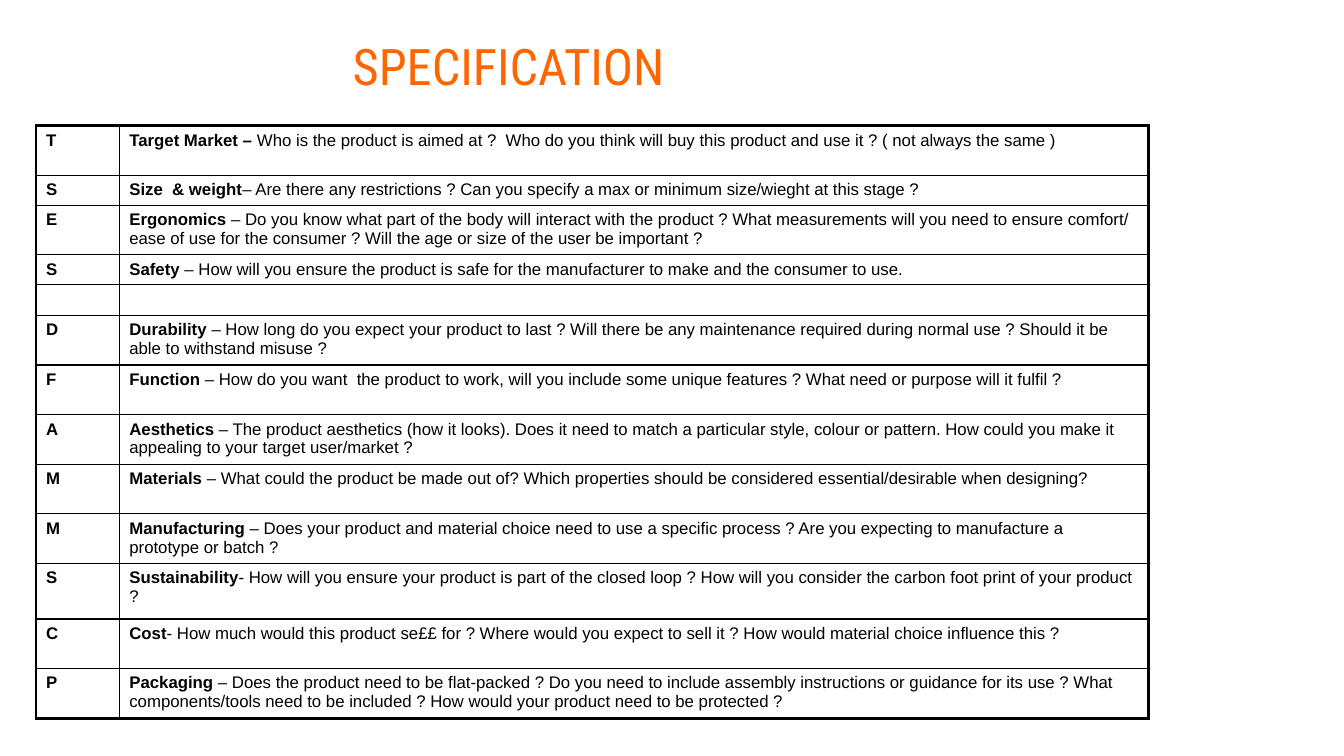
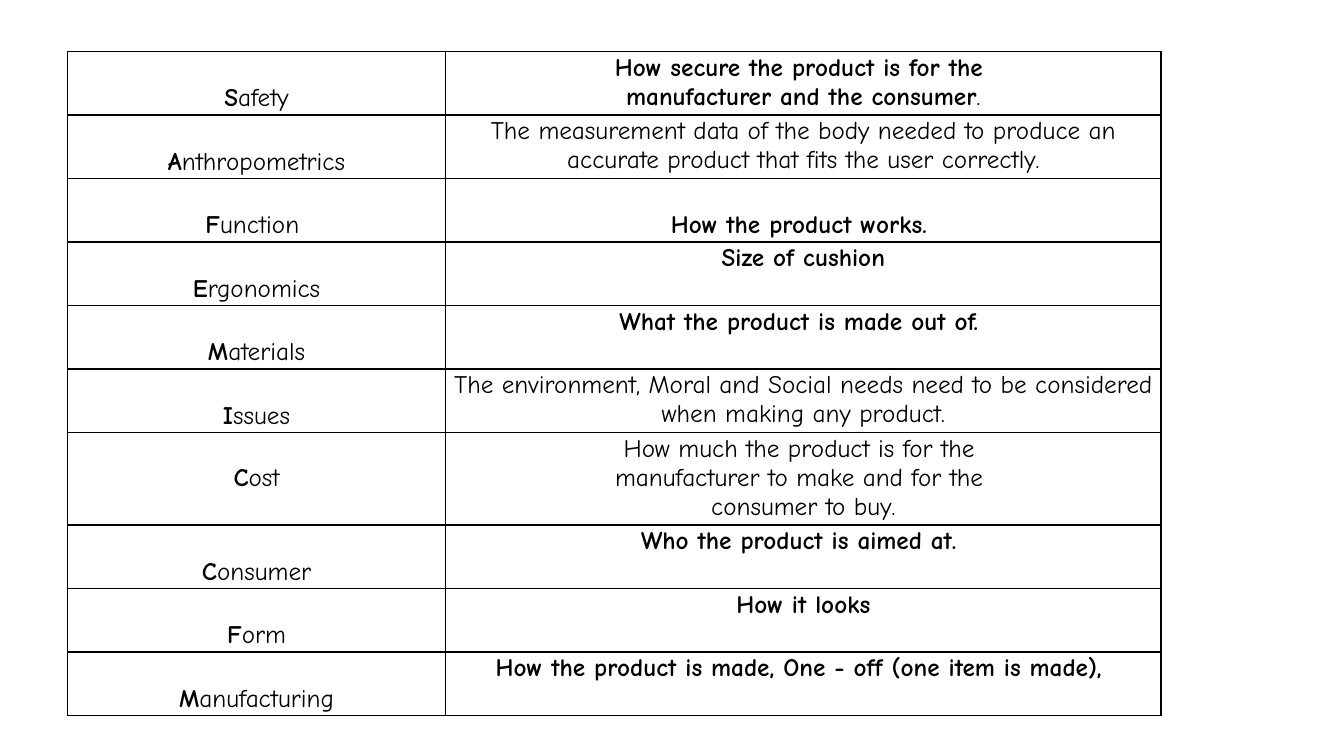
from typing import NamedTuple

from lxml import etree
from pptx import Presentation
from pptx.dml.color import RGBColor
from pptx.enum.text import MSO_ANCHOR, MSO_AUTO_SIZE, PP_ALIGN
from pptx.oxml.ns import qn
from pptx.util import Cm, Pt

TOP, MIDDLE, BOTTOM = MSO_ANCHOR.TOP, MSO_ANCHOR.MIDDLE, MSO_ANCHOR.BOTTOM
LEFT, CENTER = PP_ALIGN.LEFT, PP_ALIGN.CENTER
NO_AUTOFIT = MSO_AUTO_SIZE.NONE
TITLE_ONLY, BLANK = 5, 6

BLACK, ORANGE = "000000", "FF6600"
THIN, THICK = 1, 2.25


class Run(NamedTuple):
    text: str
    bold: bool = False


class CellText(NamedTuple):
    paragraphs: list[list[Run]]
    anchor: MSO_ANCHOR = TOP


class GridStyle(NamedTuple):
    font: str
    size: float
    align: PP_ALIGN
    frame: float  # outer border width in points
    margin_x: float  # cell margins in centimetres
    margin_y: float


class Criterion(NamedTuple):
    letter: str
    name: str
    question: str
    height: float = 1.25


class Term(NamedTuple):
    name: str
    meaning: list[list[Run]]
    height: float = 1.6
    name_anchor: MSO_ANCHOR = BOTTOM
    meaning_anchor: MSO_ANCHOR = TOP


SPEC_STYLE = GridStyle("Arial", 12, LEFT, THICK, 0.25, 0.13)
TERM_STYLE = GridStyle("Comic Neue", 18, CENTER, THIN, 0.05, 0.05)
ONE_LINE = 0.75

CRITERIA = [
    Criterion("T", "Target Market – ", "Who is the product is aimed at ?  Who do you think will buy this "
              "product and use it ? ( not always the same )"),
    Criterion("S", "Size  & weight", "– Are there any restrictions ? Can you specify a max or minimum "
              "size/wieght at this stage ?", ONE_LINE),
    Criterion("E", "Ergonomics", " – Do you know what part of the body will interact with the product ? "
              "What measurements will you need to ensure comfort/ ease of use for the consumer ? "
              "Will the age or size of the user be important ?"),
    Criterion("S", "Safety", " – How will you ensure the product is safe for the manufacturer to make "
              "and the consumer to use.", ONE_LINE),
    Criterion("", "", "", ONE_LINE),
    Criterion("D", "Durability ", "– How long do you expect your product to last ? Will there be any "
              "maintenance required during normal use ? Should it be able to withstand misuse ?"),
    Criterion("F", "Function", " – How do you want  the product to work, will you include some unique "
              "features ? What need or purpose will it fulfil ?"),
    Criterion("A", "Aesthetics", " – The product aesthetics (how it looks). Does it need to match a "
              "particular style, colour or pattern. How could you make it appealing to your target "
              "user/market ?"),
    Criterion("M", "Materials", " – What could the product be made out of? Which properties should be "
              "considered essential/desirable when designing?"),
    Criterion("M", "Manufacturing", " – Does your product and material choice need to use a specific "
              "process ? Are you expecting to manufacture a prototype or batch ?"),
    Criterion("S", "Sustainability", "- How will you ensure your product is part of the closed loop ? "
              "How will you consider the carbon foot print of your product ?", 1.4),
    Criterion("C", "Cost", "- How much would this product se££ for ? Where would you expect to sell it ? "
              "How would material choice influence this ?"),
    Criterion("P", "Packaging", " – Does the product need to be flat-packed ? Do you need to include "
              "assembly instructions or guidance for its use ? What components/tools need to be "
              "included ? How would your product need to be protected ?"),
]

TERMS = [
    Term("Safety", [[Run("How secure the product is for the ", True)],
                    [Run("manufacturer and the consumer", True), Run(".")]]),
    Term("Anthropometrics", [[Run("The measurement data of the body needed to produce an accurate "
                                  "product that fits the user correctly.")]]),
    Term("Function ", [[Run("How the product works. ", True)]], meaning_anchor=BOTTOM),
    Term("Ergonomics", [[Run("Size of cushion", True)]]),
    Term("Materials", [[Run("What the product is made out of. ", True)]]),
    Term("Issues", [[Run("The environment, Moral and Social needs need to be considered when making "
                         "any product.")]]),
    Term("Cost", [[Run("How much the product is for the ")],
                  [Run("manufacturer to make and for the ")],
                  [Run("consumer to buy.")]], height=2.33, name_anchor=MIDDLE),
    Term("Consumer", [[Run("Who the product is aimed at. ", True)]]),
    Term("Form", [[Run("How it looks", True)]]),
    Term("Manufacturing", [[Run("How the product is made, One - off (one item is made), ", True)]]),
]


def rgb(value: str) -> RGBColor:
    return RGBColor.from_string(value)


def add_run(paragraph, run: Run, font: str, size: float, color: str) -> None:
    text = paragraph.add_run()
    text.text = run.text
    text.font.name, text.font.size, text.font.bold = font, Pt(size), run.bold
    text.font.color.rgb = rgb(color)


def set_borders(cell, widths: dict[str, float]) -> None:
    properties = cell._tc.get_or_add_tcPr()
    for side, width in widths.items():
        line = etree.SubElement(properties, qn(f"a:ln{side}"), w=str(Pt(width)))
        fill = etree.SubElement(line, qn("a:solidFill"))
        etree.SubElement(fill, qn("a:srgbClr"), val=BLACK)


def fill_cell(cell, content: CellText, style: GridStyle) -> None:
    cell.margin_left = cell.margin_right = Cm(style.margin_x)
    cell.margin_top = cell.margin_bottom = Cm(style.margin_y)
    cell.vertical_anchor = content.anchor
    frame = cell.text_frame
    for index, runs in enumerate(content.paragraphs):
        paragraph = frame.add_paragraph() if index else frame.paragraphs[0]
        paragraph.alignment = style.align
        for run in runs:
            if run.text:
                add_run(paragraph, run, style.font, style.size, BLACK)
        # Keeps an empty cell as low as its row
        etree.SubElement(paragraph._p, qn("a:endParaRPr"), sz=str(int(style.size * 100)))


def add_grid(slide, left: float, top: float, widths: list[float], heights: list[float],
             rows: list[list[CellText]], style: GridStyle) -> None:
    table = slide.shapes.add_table(len(rows), len(widths), Cm(left), Cm(top),
                                   Cm(sum(widths)), Cm(sum(heights))).table
    table.first_row = table.horz_banding = False
    for column, width in zip(table.columns, widths):
        column.width = Cm(width)
    for row, height in zip(table.rows, heights):
        row.height = Cm(height)

    last_row, last_column = len(rows) - 1, len(widths) - 1
    for r, contents in enumerate(rows):
        for c, content in enumerate(contents):
            cell = table.cell(r, c)
            on_frame = {"L": c == 0, "R": c == last_column, "T": r == 0, "B": r == last_row}
            set_borders(cell, {side: style.frame if outer else THIN
                               for side, outer in on_frame.items()})
            cell.fill.background()
            fill_cell(cell, content, style)


def set_title(slide, text: str) -> None:
    title = slide.shapes.title
    title.left, title.top, title.width, title.height = Cm(4.72), Cm(0.75), Cm(16.2), Cm(1.32)
    frame = title.text_frame
    frame.word_wrap = False
    frame.auto_size = NO_AUTOFIT
    frame.vertical_anchor = TOP
    frame.paragraphs[0].alignment = CENTER
    add_run(frame.paragraphs[0], Run(text), "Roboto Condensed", 36, ORANGE)


def build_specification(deck) -> None:
    slide = deck.slides.add_slide(deck.slide_layouts[TITLE_ONLY])
    set_title(slide, "SPECIFICATION")
    rows = [[CellText([[Run(item.letter, True)]]),
             CellText([[Run(item.name, True), Run(item.question)]])] for item in CRITERIA]
    add_grid(slide, 0.91, 3.17, [2.1, 25.93], [item.height for item in CRITERIA], rows, SPEC_STYLE)


def build_terms(deck) -> None:
    slide = deck.slides.add_slide(deck.slide_layouts[BLANK])
    # The first letter of each term stands out in bold
    rows = [[CellText([[Run(term.name[0], True), Run(term.name[1:])]], term.name_anchor),
             CellText(term.meaning, term.meaning_anchor)] for term in TERMS]
    add_grid(slide, 1.7, 1.3, [9.53, 18.03], [term.height for term in TERMS], rows, TERM_STYLE)


def main() -> None:
    deck = Presentation()
    deck.slide_width, deck.slide_height = Cm(33.87), Cm(19.05)
    build_specification(deck)
    build_terms(deck)
    deck.save("out.pptx")


if __name__ == "__main__":
    main()
